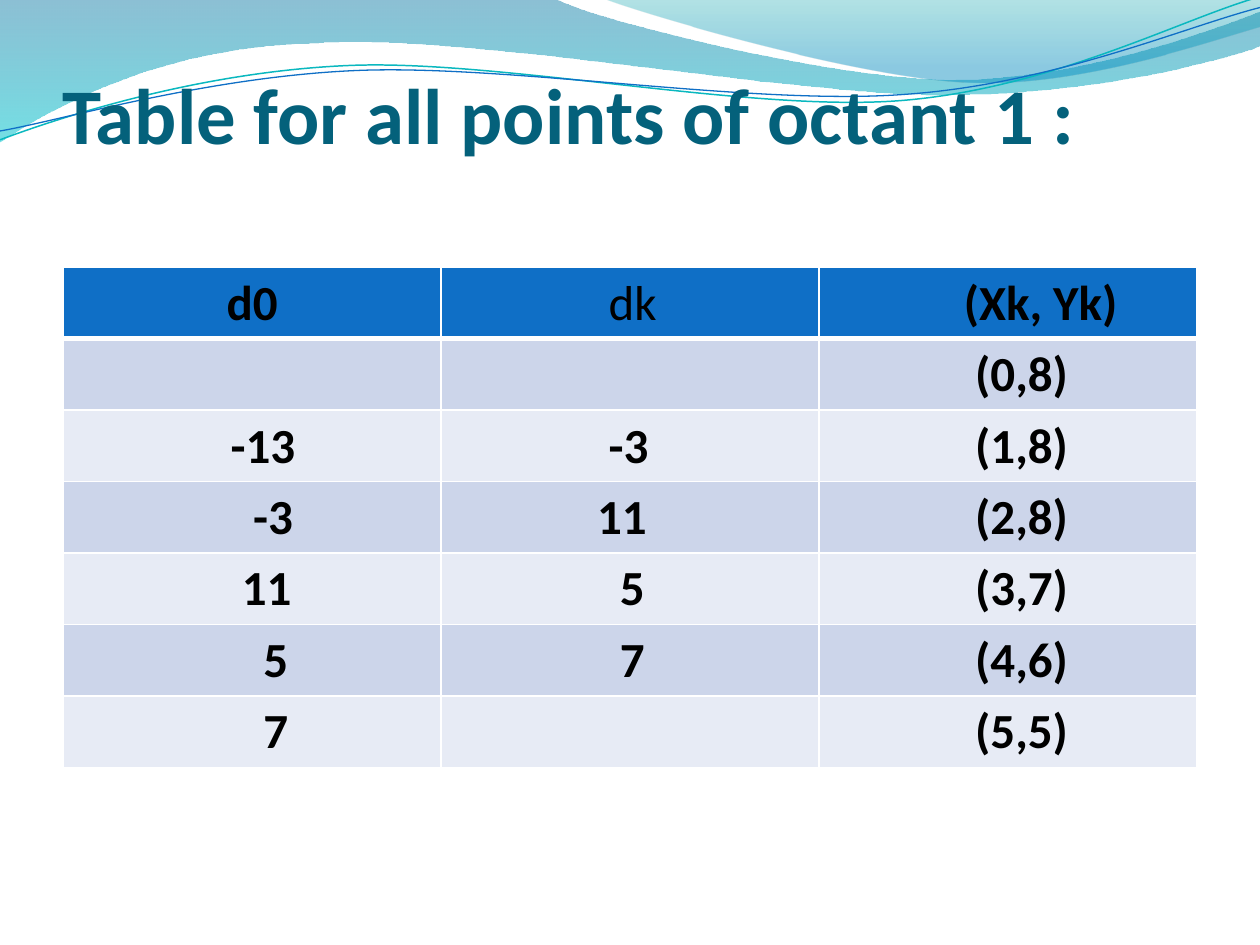
from math import cos, radians, sin

from lxml.etree import SubElement
from pptx import Presentation
from pptx.dml.color import RGBColor
from pptx.enum.text import MSO_ANCHOR, PP_ALIGN
from pptx.oxml import parse_xml
from pptx.oxml.ns import nsdecls, qn
from pptx.util import Inches, Pt

FONT = "Calibri"
WHITE = "FFFFFF"
HEADER_FILL = "0F6FC6"
BAND_FILLS = ("CCD5EA", "E7EBF5")
RIBBON_TILT = -2.7

WIDE_WAVE = [
    [(0, 0)], [(4.4, -0.01)],
    [(4.76, 0.17), (6.64, 0.63), (7.58, 0.63)],
    [(8.53, 0.63), (9.58, 0.26), (10, 0.09)],
    [(10.01, 0.36)],
    [(9.83, 0.44), (8.7, 0.76), (7.46, 0.75)],
    [(6.22, 0.75), (3.82, 0.28), (2.57, 0.34)],
    [(1.29, 0.36), (0.46, 0.83), (-0.01, 1.13)],
    [(0, 0)],
]
RIGHT_WAVE = [
    [(4.79, -0.01)],
    [(5.09, 0.11), (6.82, 0.62), (7.69, 0.65)],
    [(8.56, 0.69), (9.61, 0.32), (10, 0.21)],
    [(10, 0)], [(4.79, -0.01)],
]
TEAL_RIBBON = [
    [(0, 1.11)],
    [(0.48, 0.93), (1.58, 0.57), (2.77, 0.52)],
    [(3.95, 0.47), (5.93, 0.89), (7.13, 0.8)],
    [(8.33, 0.71), (9.38, 0.15), (9.98, -0.02)],
]
BLUE_RIBBON = [
    [(0, 1.04)],
    [(0.47, 0.96), (1.64, 0.61), (2.83, 0.56)],
    [(4.03, 0.51), (5.97, 0.84), (7.17, 0.75)],
    [(8.36, 0.67), (9.41, 0.21), (10, 0.06)],
]

HEADERS = [("d0", None), ("dk", 1.33), ("(Xk, Yk)", 1.15)]
ROWS = [
    [("", 0.1), ("", 0.1), ("(0,8)", 1.24)],
    [("-13", 1.33), ("-3", 1.33), ("(1,8)", 1.24)],
    [("-3", 1.51), ("11", 1.24), ("(2,8)", 1.24)],
    [("11", 1.42), ("5", 1.42), ("(3,7)", 1.24)],
    [("5", 1.59), ("7", 1.42), ("(4,6)", 1.24)],
    [("7", 1.59), ("", 0.1), ("(5,5)", 1.24)],
]


def color(value):
    """Turn a hex string into a colour."""
    return RGBColor.from_string(value)


def rotate(point, center, degrees):
    """Turn a point clockwise about a center."""
    cosine, sine = cos(radians(degrees)), sin(radians(degrees))
    x, y = point[0] - center[0], point[1] - center[1]
    return center[0] + x * cosine - y * sine, center[1] + x * sine + y * cosine


def add_outline(slide, left, top, segments, close):
    """Draw straight and cubic segments as a freeform."""
    corners = [[(left + Inches(x), top + Inches(y)) for x, y in segment]
               for segment in segments]
    builder = slide.shapes.build_freeform(*corners[0][0], scale=1.0)
    builder.add_line_segments([segment[-1] for segment in corners[1:]], close=close)
    shape = builder.convert_to_shape()
    shape.shadow.inherit = False
    lines = list(shape.element.spPr.iter(qn("a:lnTo")))
    for node, segment in zip(lines, corners[1:]):
        if len(segment) == 3:
            points = "".join(f'<a:pt x="{x - shape.left}" y="{y - shape.top}"/>'
                             for x, y in segment)
            curve = parse_xml(f'<a:cubicBezTo {nsdecls("a")}>{points}</a:cubicBezTo>')
            node.getparent().replace(node, curve)
    return shape


def add_wave(slide, left, top, segments, stops):
    """Draw a wave filled with a translucent vertical gradient."""
    shape = add_outline(slide, left, top, segments, True)
    shape.line.fill.background()
    shape.fill.gradient()
    shape.fill.gradient_angle = 270
    for stop, (position, value, _) in zip(shape.fill.gradient_stops, stops):
        stop.position = position
        stop.color.rgb = color(value)
    gradient = shape.element.spPr.find(qn("a:gradFill"))
    for node, (_, _, opacity) in zip(gradient.iter(qn("a:srgbClr")), stops):
        SubElement(node, qn("a:alpha"), val=str(opacity * 1000))


def add_ribbon(slide, left, top, segments, center, value, width):
    """Draw a thin tilted ribbon line."""
    level = [[rotate(point, center, -RIBBON_TILT) for point in segment]
             for segment in segments]
    shape = add_outline(slide, left, top, level, False)
    shape.rotation = RIBBON_TILT
    shape.fill.background()
    shape.line.color.rgb = color(value)
    shape.line.width = Pt(width)


def add_waves(slide, left, top):
    """Draw the decoration along the top edge."""
    add_wave(slide, left, top, WIDE_WAVE, [(0, "0074A1", 45), (1, "00C6CF", 55)])
    add_wave(slide, left, top, RIGHT_WAVE, [(0, "00A1A9", 30), (0.8, "008BBF", 45)])
    add_ribbon(slide, left, top, TEAL_RIBBON, (4.99, 0.57), "0AB8BF", 0.85)
    add_ribbon(slide, left, top, BLUE_RIBBON, (5, 0.59), "0F6FC6", 0.75)


def format_runs(paragraph, size, value, bold):
    """Set the font of every run in a paragraph."""
    for run in paragraph.runs:
        run.font.name = FONT
        run.font.size = Pt(size)
        run.font.bold = bold
        run.font.color.rgb = color(value)


def add_title(slide, left, top, width, height):
    """Place the heading above the table."""
    frame = slide.shapes.add_textbox(left, top, width, height).text_frame
    frame.word_wrap = True
    frame.vertical_anchor = MSO_ANCHOR.BOTTOM
    frame.margin_left = frame.margin_right = frame.margin_top = 0
    frame.margin_bottom = Inches(0.75)
    frame.text = "Table for all points of octant 1 :"
    format_runs(frame.paragraphs[0], 45, "04617B", True)


def set_borders(cell, top_width, bottom_width):
    """Give a cell white borders."""
    properties = cell._tc.get_or_add_tcPr()
    widths = {"lnL": 1, "lnR": 1, "lnT": top_width, "lnB": bottom_width}
    for side, width in widths.items():
        line = SubElement(properties, qn(f"a:{side}"), w=str(Pt(width)))
        fill = SubElement(line, qn("a:solidFill"))
        SubElement(fill, qn("a:srgbClr"), val=WHITE)


def add_points_table(slide, left, top, width, height):
    """Place the table of decision values and points."""
    rows = [HEADERS, *ROWS]
    frame = slide.shapes.add_table(len(rows), len(HEADERS), left, top, width, height)
    table = frame.table
    for row_index, row in enumerate(rows):
        header = row_index == 0
        table.rows[row_index].height = Inches(0.41)
        for column_index, (text, indent) in enumerate(row):
            cell = table.cell(row_index, column_index)
            set_borders(cell, 3 if row_index == 1 else 1, 3 if header else 1)
            cell.fill.solid()
            cell.fill.fore_color.rgb = color(
                HEADER_FILL if header else BAND_FILLS[(row_index - 1) % 2])
            cell.text_frame.text = text
            paragraph = cell.text_frame.paragraphs[0]
            if indent is None:
                paragraph.alignment = PP_ALIGN.CENTER
            else:
                cell.margin_left = Inches(indent)
            format_runs(paragraph, 28, "000000", text != "dk")
    frame.height = height


def main():
    """Build the slide and save it."""
    presentation = Presentation()
    presentation.slide_width, presentation.slide_height = Inches(10), Inches(7.5)
    slide = presentation.slides.add_slide(presentation.slide_layouts[6])
    add_waves(slide, Inches(0), Inches(0))
    add_title(slide, Inches(0.5), Inches(0.77), Inches(9), Inches(1.25))
    add_points_table(slide, Inches(0.5), Inches(2.12), Inches(9), Inches(3.97))
    presentation.save("out.pptx")


if __name__ == "__main__":
    main()
